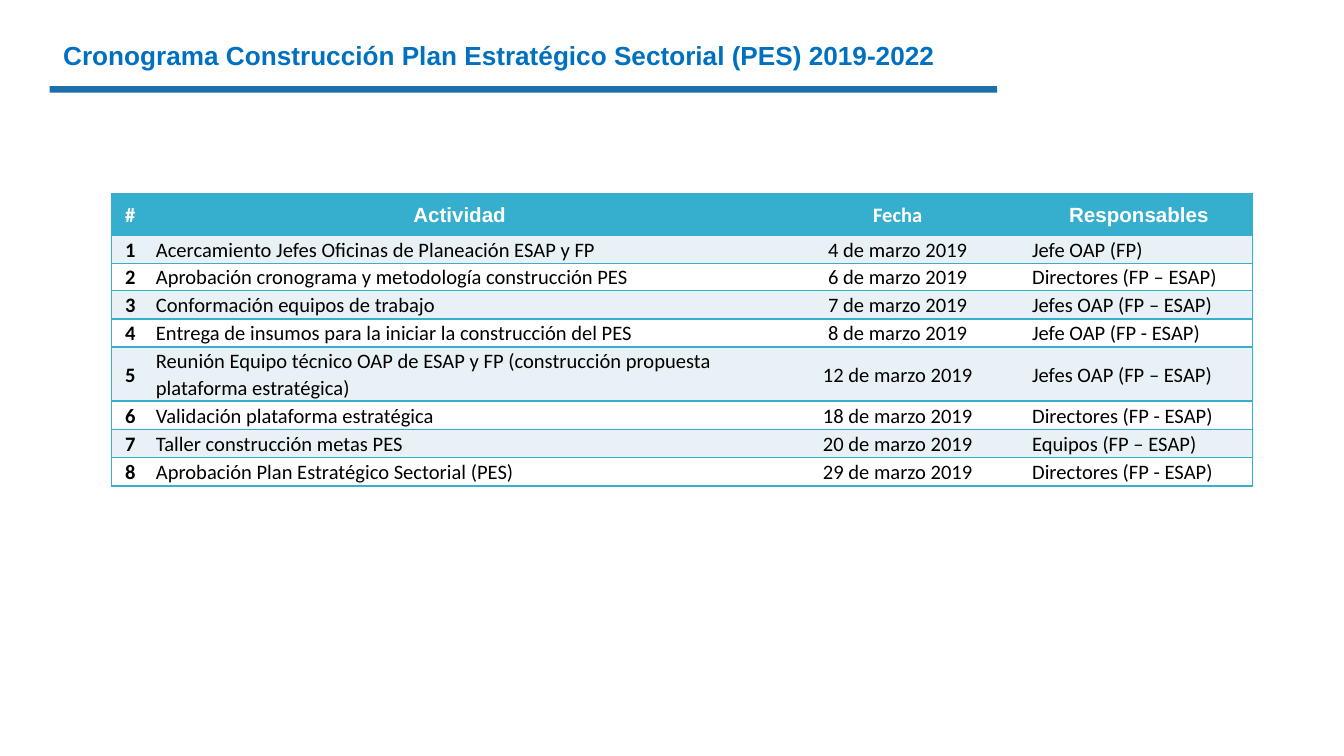
from lxml.etree import SubElement
from pptx import Presentation
from pptx.dml.color import RGBColor
from pptx.enum.shapes import MSO_SHAPE as Shape
from pptx.enum.text import MSO_ANCHOR as Anchor, PP_ALIGN as Align
from pptx.oxml.ns import qn
from pptx.util import Inches, Pt

COLORS = {
    "title": "0070C0",
    "rule": "1D6FA9",
    "accent": "36AFCE",
    "band": "E8F2F6",
    "white": "FFFFFF",
    "black": "000000",
}
HEADERS = ["#", "Actividad", "Fecha", "Responsables"]
HEADER_FONTS = ["Calibri", "Arial", "Calibri", "Arial"]
ALIGNMENTS = [Align.CENTER, Align.LEFT, Align.CENTER, Align.LEFT]
COLUMN_WIDTHS = [0.28, 4.62, 1.9, 1.69]
ROW_HEIGHTS = [0.31, 0.21, 0.2, 0.21, 0.21, 0.28, 0.21, 0.21, 0.21]
ACTIVITIES = [
    ("Acercamiento Jefes Oficinas de Planeación ESAP y FP", "4 de marzo 2019", "Jefe OAP (FP)"),
    ("Aprobación cronograma y metodología construcción PES", "6 de marzo 2019", "Directores (FP – ESAP)"),
    ("Conformación equipos de trabajo", "7 de marzo 2019", "Jefes OAP (FP – ESAP)"),
    ("Entrega de insumos para la iniciar la construcción del PES", "8 de marzo 2019", "Jefe OAP (FP - ESAP)"),
    ("Reunión Equipo técnico OAP de ESAP y FP (construcción propuesta plataforma estratégica)",
     "12 de marzo 2019", "Jefes OAP (FP – ESAP)"),
    ("Validación plataforma estratégica", "18 de marzo 2019", "Directores (FP - ESAP)"),
    ("Taller construcción metas PES", "20 de marzo 2019", "Equipos (FP – ESAP)"),
    ("Aprobación Plan Estratégico Sectorial (PES)", "29 de marzo 2019", "Directores (FP - ESAP)"),
]


def rgb(name):
    return RGBColor.from_string(COLORS[name])


def style_font(font, name, size, color, bold):
    font.name = name
    font.size = Pt(size)
    font.bold = bold
    font.color.rgb = rgb(color)


def add_title(slide, text):
    title = slide.shapes.title
    title.left, title.top = Inches(0.37), Inches(0.02)
    title.width, title.height = Inches(7.14), Inches(0.57)
    title.fill.solid()
    title.fill.fore_color.rgb = rgb("white")
    frame = title.text_frame
    frame.text = text
    frame.word_wrap = True
    frame.vertical_anchor = Anchor.BOTTOM
    frame.margin_bottom = Inches(0.06)
    para = frame.paragraphs[0]
    para.alignment = Align.LEFT
    style_font(para.runs[0].font, "Arial", 14, "title", True)


def add_rule(slide):
    rule = slide.shapes.add_shape(
        Shape.RECTANGLE, Inches(0.37), Inches(0.64), Inches(7.05), Inches(0.05))
    rule.shadow.inherit = False
    rule.fill.solid()
    rule.fill.fore_color.rgb = rgb("rule")
    rule.line.fill.background()


def set_borders(cell, visible_sides):
    properties = cell._tc.get_or_add_tcPr()
    for side in "LRTB":
        line = SubElement(properties, qn(f"a:ln{side}"), w=str(Pt(1)))
        if side in visible_sides:
            fill = SubElement(line, qn("a:solidFill"))
            SubElement(fill, qn("a:srgbClr"), val=COLORS["accent"])
        else:
            SubElement(line, qn("a:noFill"))


def fill_cell(cell, text, font_name, color, bold, alignment, background, sides):
    set_borders(cell, sides)
    cell.fill.solid()
    cell.fill.fore_color.rgb = rgb(background)
    cell.vertical_anchor = Anchor.MIDDLE
    cell.margin_left = cell.margin_right = Inches(0.05)
    cell.margin_top = cell.margin_bottom = 0
    cell.text = text
    para = cell.text_frame.paragraphs[0]
    para.alignment = alignment
    para.line_spacing = 1.07
    style_font(para.runs[0].font, font_name, 11, color, bold)


def add_schedule(slide):
    rows = [HEADERS] + [(str(number), *activity) for number, activity in enumerate(ACTIVITIES, 1)]
    table = slide.shapes.add_table(
        len(rows), len(HEADERS), Inches(0.83), Inches(1.44),
        Inches(sum(COLUMN_WIDTHS)), Inches(sum(ROW_HEIGHTS))).table
    for column, width in zip(table.columns, COLUMN_WIDTHS):
        column.width = Inches(width)
    for row, height in zip(table.rows, ROW_HEIGHTS):
        row.height = Inches(height)
    last = len(HEADERS) - 1
    for r, values in enumerate(rows):
        header = r == 0
        background = "accent" if header else "band" if r % 2 else "white"
        for c, text in enumerate(values):
            fill_cell(
                table.cell(r, c), text,
                font_name=HEADER_FONTS[c] if header else "Calibri",
                color="white" if header else "black",
                bold=header or c == 0,
                alignment=Align.CENTER if header else ALIGNMENTS[c],
                background=background,
                sides="TB" + {0: "L", last: "R"}.get(c, ""))


def main():
    deck = Presentation()
    deck.slide_width = Inches(10)
    deck.slide_height = deck.slide_width * 9 // 16
    slide = deck.slides.add_slide(deck.slide_layouts[5])
    add_title(slide, "Cronograma Construcción Plan Estratégico Sectorial (PES) 2019-2022")
    add_rule(slide)
    add_schedule(slide)
    deck.save("out.pptx")


if __name__ == "__main__":
    main()
